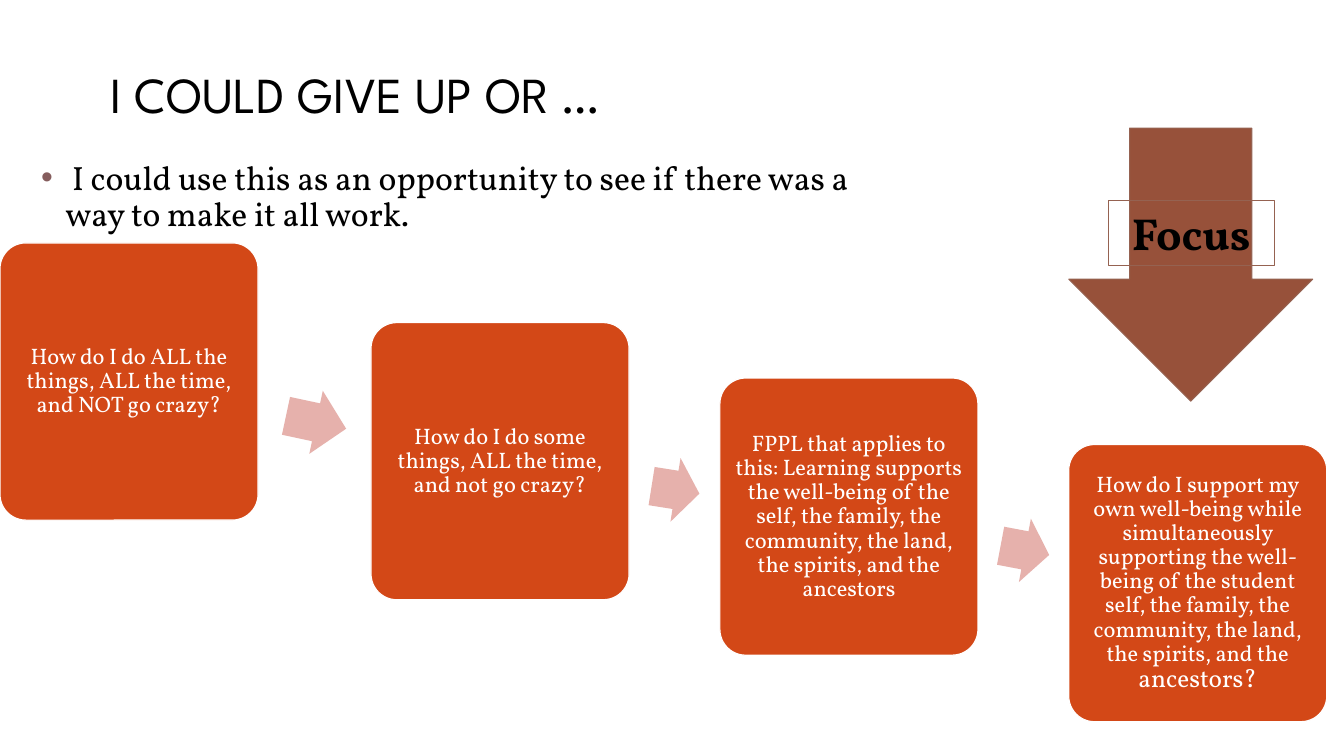
from dataclasses import dataclass

from lxml import etree
from pptx import Presentation
from pptx.dml.color import RGBColor
from pptx.enum.shapes import MSO_SHAPE
from pptx.enum.text import MSO_ANCHOR, PP_ALIGN
from pptx.oxml.ns import qn
from pptx.util import Pt

ROUNDED = MSO_SHAPE.ROUNDED_RECTANGLE
RIGHT_ARROW = MSO_SHAPE.RIGHT_ARROW
DOWN_ARROW = MSO_SHAPE.DOWN_ARROW
RECTANGLE = MSO_SHAPE.RECTANGLE
TOP, MIDDLE, BOTTOM = MSO_ANCHOR.TOP, MSO_ANCHOR.MIDDLE, MSO_ANCHOR.BOTTOM
LEFT, CENTER = PP_ALIGN.LEFT, PP_ALIGN.CENTER
PX = 9144


@dataclass(frozen=True)
class Theme:
    """Fonts, colours and type sizes of the slide."""

    heading_font: str = "League Spartan"
    body_font: str = "Vollkorn"
    ink: str = "000000"
    white: str = "FFFFFF"
    bullet: str = "855D5D"
    card: str = "D34817"
    step_arrow: str = "E6B1AC"
    focus_fill: str = "97513A"
    focus_line: str = "956251"
    title_size: int = 36
    body_size: int = 24
    card_size: int = 16
    card_end_size: int = 18
    focus_size: int = 32


THEME = Theme()

CARD_SIZE = (256, 275)
CARDS = [
    ((0, 241), [("How do I do ALL the things, ALL the time, and NOT go crazy?", THEME.card_size)]),
    ((368, 320), [("How do I do some things, ALL the time, and not go crazy?", THEME.card_size)]),
    ((714, 375), [(
        "FPPL that applies to this: Learning supports the well-being of the self, the family, "
        "the community, the land, the spirits, and the ancestors", THEME.card_size)]),
    ((1060, 441), [
        ("How do I support my own well-being while simultaneously supporting the well-being of "
         "the student self, the family, the community, the land, the spirits, and the ",
         THEME.card_size),
        ("ancestors?", THEME.card_end_size)]),
]
STEP_ARROWS = [
    ((283, 387, 61, 64), 12.1),
    ((646, 454, 48, 64), 9),
    ((992, 514, 49, 64), 10.7),
]


def scaled(*lengths):
    """Turn px lengths into EMU."""
    return [length * PX for length in lengths]


def set_attributes(target, values):
    """Set every attribute named in a dict of values."""
    for name, value in values.items():
        setattr(target, name, value)


def add_shape(slide, kind, box, fill=None, line=None, line_width=0.75):
    """Add a flat preset shape with the given fill and line."""
    shape = slide.shapes.add_shape(kind, *scaled(*box))
    shape.shadow.inherit = False
    if fill:
        shape.fill.solid()
        shape.fill.fore_color.rgb = RGBColor.from_string(fill)
    else:
        shape.fill.background()
    if line:
        shape.line.color.rgb = RGBColor.from_string(line)
        shape.line.width = Pt(line_width)
    else:
        shape.line.fill.background()
    return shape


def write_text(shape, runs, font, color, anchor=TOP, align=LEFT, spacing=0.9,
               insets=(10, 5), bold=False):
    """Write one paragraph of (text, size) runs and return it."""
    side, edge = scaled(*insets)
    frame = shape.text_frame
    set_attributes(frame, {
        "word_wrap": True, "vertical_anchor": anchor, "margin_left": side,
        "margin_right": side, "margin_top": edge, "margin_bottom": edge})
    paragraph = frame.paragraphs[0]
    set_attributes(paragraph, {"alignment": align, "line_spacing": spacing})
    for text, size in runs:
        run = paragraph.add_run()
        run.text = text
        set_attributes(run.font, {"name": font, "size": Pt(size), "bold": bold})
        run.font.color.rgb = RGBColor.from_string(color)
    return paragraph


def add_bullet(paragraph, margin, indent):
    """Give a paragraph a coloured bullet and a hanging indent."""
    properties = paragraph._p.get_or_add_pPr()
    properties.set("marL", str(margin * PX))
    properties.set("indent", str(indent * PX))
    color = etree.SubElement(properties, qn("a:buClr"))
    etree.SubElement(color, qn("a:srgbClr"), val=THEME.bullet)
    etree.SubElement(properties, qn("a:buFont"), typeface="Arial")
    etree.SubElement(properties, qn("a:buChar"), char="•")


def add_title(slide, box):
    """Place the slide title at the bottom of its box."""
    title = slide.shapes.add_textbox(*scaled(*box))
    write_text(title, [("I COULD GIVE UP OR …", THEME.title_size)],
               THEME.heading_font, THEME.ink, BOTTOM)


def add_body(slide, box):
    """Place the bulleted statement."""
    body = slide.shapes.add_textbox(*scaled(*box))
    text = " I could use this as an opportunity to see if there was a way to make it all work."
    paragraph = write_text(body, [(text, THEME.body_size)], THEME.body_font, THEME.ink)
    add_bullet(paragraph, 24, -25)


def add_card(slide, box, runs):
    """Place one rounded question card."""
    card = add_shape(slide, ROUNDED, box, THEME.card, THEME.white, 0.85)
    card.adjustments[0] = 0.1
    write_text(card, runs, THEME.body_font, THEME.white, MIDDLE, CENTER, insets=(7, 7))


def add_step_arrow(slide, box, rotation):
    """Place one tilted arrow between two cards."""
    arrow = add_shape(slide, RIGHT_ARROW, box, THEME.step_arrow)
    arrow.adjustments[0] = 0.6
    arrow.rotation = rotation


def add_focus(slide, box):
    """Place the large down arrow and its framed label."""
    left, top, width, height = box
    add_shape(slide, DOWN_ARROW, box, THEME.focus_fill, THEME.focus_line)
    label_width = 165
    label_box = (left + (width - label_width) // 2 + 1, top + 72, label_width, 64)
    label = add_shape(slide, RECTANGLE, label_box, line=THEME.focus_line)
    write_text(label, [("Focus", THEME.focus_size)], THEME.body_font, THEME.ink,
               MIDDLE, CENTER, spacing=1.0, bold=True)


def build_slide(presentation):
    """Build the slide from its regions."""
    slide = presentation.slides.add_slide(presentation.slide_layouts[6])
    add_body(slide, (31, 155, 879, 558))
    add_title(slide, (100, 3, 1050, 125))
    for position, runs in CARDS:
        add_card(slide, position + CARD_SIZE, runs)
    for box, rotation in STEP_ARROWS:
        add_step_arrow(slide, box, rotation)
    add_focus(slide, (1060, 127, 242, 271))


def main():
    """Create and save the presentation."""
    presentation = Presentation()
    width, height = scaled(1333, 750)
    set_attributes(presentation, {"slide_width": width, "slide_height": height})
    build_slide(presentation)
    presentation.save("out.pptx")


if __name__ == "__main__":
    main()
